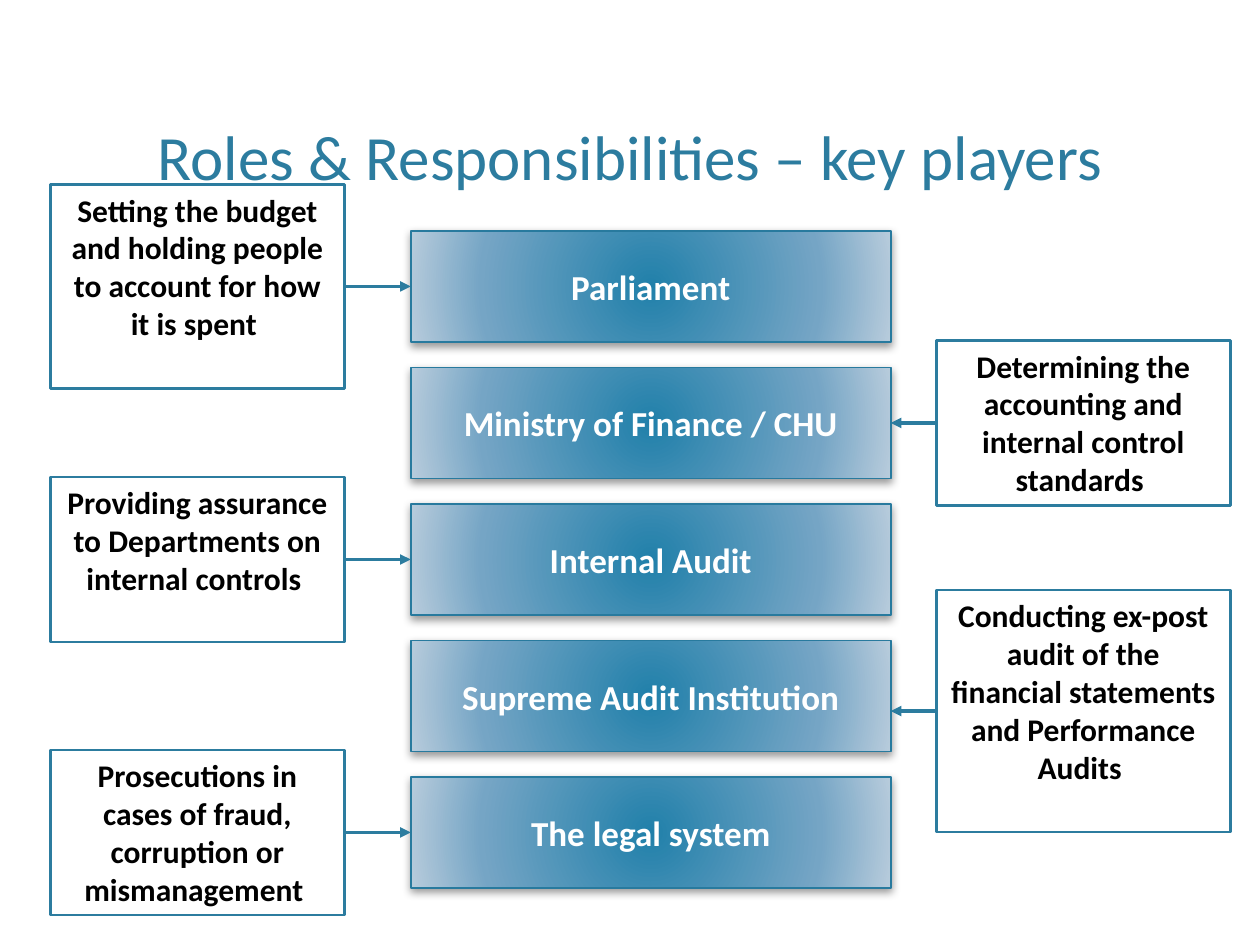
import pptx
import pptx.util
import pptx.oxml
import pptx.oxml.ns
import pptx.dml.color
import pptx.enum.shapes
import pptx.enum.text

Pt = pptx.util.Pt
FONT = "Calibri"
COLORS = {
    "title": "2C7C9F", "note_line": "2C7C9F", "role_line": "287A9E",
    "note_text": "000000", "role_text": "FFFFFF", "shadow": "000000",
}
GRADIENT = [(0, "2180AA"), (69, "75A5C5"), (100, "B8CCDC")]

TITLE = "Roles & Responsibilities – key players"
# role, note, side of the note, note height, downward shift of the note
PLAYERS = [
    ("Parliament", "Setting the budget and holding people to account for how it is spent ", "left", 116.6, 0),
    ("Ministry of Finance / CHU", "Determining the accounting and internal control standards ", "right", 94.3, 0),
    ("Internal Audit", "Providing assurance to Departments on internal controls ", "left", 94.3, 0),
    ("Supreme Audit Institution",
     "Conducting ex-post audit of the financial statements and Performance Audits ", "right", 138.2, 8.6),
    ("The legal system", "Prosecutions in cases of fraud, corruption or mismanagement ", "left", 94.3, 0),
]

ROLE_LEFT, ROLE_TOP, ROLE_WIDTH, ROLE_HEIGHT, ROLE_PITCH = 234.7, 132, 274.3, 63.4, 78
NOTE_LEFT = {"left": 28.8, "right": 535}
NOTE_WIDTH = 168
LEFT_SITE, RIGHT_SITE = 1, 3


def rgb(name):
    return pptx.dml.color.RGBColor.from_string(COLORS[name])


def element(xml):
    return pptx.oxml.parse_xml(xml.replace(">", " " + pptx.oxml.ns.nsdecls("a") + ">", 1)
                               if not xml.split(">", 1)[0].endswith("/")
                               else xml.replace("/>", " " + pptx.oxml.ns.nsdecls("a") + "/>", 1))


def write(shape, text, size, color, anchor, bold=False):
    frame = shape.text_frame
    frame.word_wrap = True
    frame.vertical_anchor = anchor
    paragraph = frame.paragraphs[0]
    paragraph.text = text
    paragraph.alignment = pptx.enum.text.PP_ALIGN.CENTER
    paragraph.font.name = FONT
    paragraph.font.size = Pt(size)
    paragraph.font.bold = bold
    paragraph.font.color.rgb = rgb(color)


def add_box(slide, left, top, width, height, line_color, line_width):
    shape = slide.shapes.add_shape(pptx.enum.shapes.MSO_SHAPE.RECTANGLE,
                                   Pt(left), Pt(top), Pt(width), Pt(height))
    shape.shadow.inherit = False
    shape.fill.background()
    shape.line.color.rgb = rgb(line_color)
    shape.line.width = Pt(line_width)
    return shape


def add_role(slide, text, top):
    shape = add_box(slide, ROLE_LEFT, top, ROLE_WIDTH, ROLE_HEIGHT, "role_line", 1)
    properties = shape.element.spPr
    stops = "".join(f'<a:gs pos="{position * 1000}"><a:srgbClr val="{color}"/></a:gs>'
                    for position, color in GRADIENT)
    properties.replace(properties.find(pptx.oxml.ns.qn("a:noFill")), element(
        f'<a:gradFill><a:gsLst>{stops}</a:gsLst><a:path path="circle">'
        '<a:fillToRect l="50000" t="50000" r="50000" b="50000"/></a:path></a:gradFill>'))
    properties.find(pptx.oxml.ns.qn("a:effectLst")).append(element(
        f'<a:outerShdw blurRad="{Pt(5)}" dist="{Pt(2)}" dir="5400000" rotWithShape="0">'
        f'<a:srgbClr val="{COLORS["shadow"]}"><a:alpha val="40000"/></a:srgbClr></a:outerShdw>'))
    write(shape, text, 20, "role_text", pptx.enum.text.MSO_ANCHOR.MIDDLE, True)
    return shape


def add_arrow(slide, note, role, side, shift):
    note_site, role_site = (RIGHT_SITE, LEFT_SITE) if side == "left" else (LEFT_SITE, RIGHT_SITE)
    start = note.left + note.width if side == "left" else note.left
    end = role.left if side == "left" else role.left + role.width
    middle = note.top + note.height // 2
    arrow = slide.shapes.add_connector(pptx.enum.shapes.MSO_CONNECTOR.STRAIGHT,
                                       start, middle, end, middle)
    arrow.begin_connect(note, note_site)
    if not shift:
        arrow.end_connect(role, role_site)
    arrow.line.color.rgb = rgb("note_line")
    arrow.line.width = Pt(2)
    arrow.line._get_or_add_ln().append(element('<a:tailEnd type="triangle"/>'))
    arrow.element.spPr.append(element("<a:effectLst/>"))


def main():
    presentation = pptx.Presentation()
    presentation.slide_width, presentation.slide_height = Pt(720), Pt(540)
    slide = presentation.slides.add_slide(presentation.slide_layouts[6])

    title = slide.shapes.add_textbox(Pt(43.2), Pt(8.6), Pt(633.6), Pt(105.1))
    write(title, TITLE, 36, "title", pptx.enum.text.MSO_ANCHOR.BOTTOM)

    for index, (role_text, note_text, side, height, shift) in enumerate(PLAYERS):
        top = ROLE_TOP + index * ROLE_PITCH
        role = add_role(slide, role_text, top)
        note_top = top + (ROLE_HEIGHT - height) / 2 + shift
        note = add_box(slide, NOTE_LEFT[side], note_top, NOTE_WIDTH, height, "note_line", 1.5)
        write(note, note_text, 18, "note_text", pptx.enum.text.MSO_ANCHOR.TOP, True)
        add_arrow(slide, note, role, side, shift)

    presentation.save("out.pptx")


if __name__ == "__main__":
    main()
